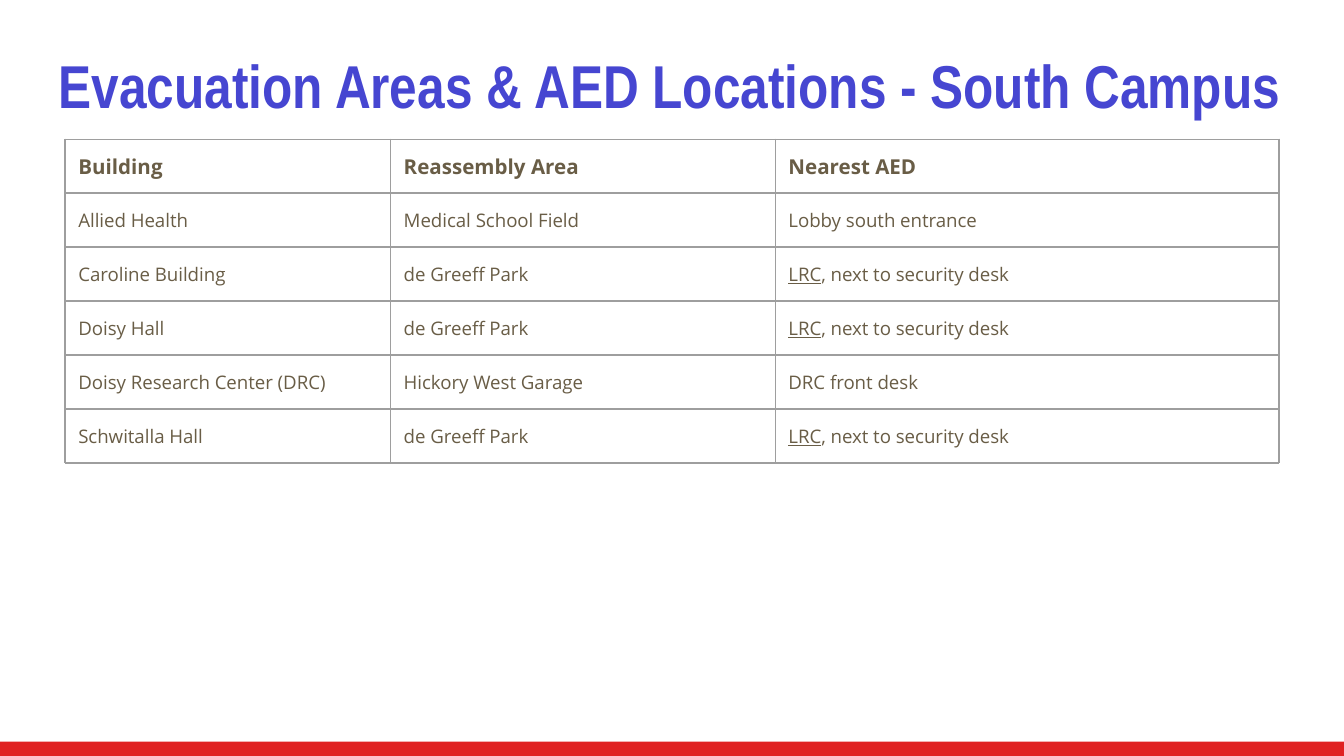
from lxml.etree import SubElement
from pptx import Presentation
from pptx.dml.color import RGBColor as Rgb
from pptx.enum.shapes import MSO_SHAPE as Shape
from pptx.enum.text import MSO_ANCHOR as Anchor
from pptx.oxml.ns import qn
from pptx.util import Cm, Pt

COLORS = {"title": "4646D1", "text": "695D46", "border": "9E9E9E", "footer": "E02121"}
INSET = Cm(0.25)
AED_DESK = [("LRC", True), (", next to security desk", False)]
LOCATIONS = [
    ["Building", "Reassembly Area", "Nearest AED"],
    ["Allied Health", "Medical School Field", "Lobby south entrance"],
    ["Caroline Building", "de Greeff Park", AED_DESK],
    ["Doisy Hall", "de Greeff Park", AED_DESK],
    ["Doisy Research Center (DRC)", "Hickory West Garage", "DRC front desk"],
    ["Schwitalla Hall", "de Greeff Park", AED_DESK],
]


def add_text(paragraph, text, size=10, font="Open Sans", color="text", bold=False, underline=False):
    run = paragraph.add_run()
    run.text = text
    run.font.size = Pt(size)
    run.font.name = font
    run.font.bold = bold
    run.font.underline = underline
    run.font.color.rgb = Rgb.from_string(COLORS[color])


class SlideBuilder:
    """Holds the current slide and draws its elements in one style."""

    def __init__(self, slide):
        self.slide = slide

    def bar(self, left, top, width, height, color):
        bar = self.slide.shapes.add_shape(
            Shape.RECTANGLE, Cm(left), Cm(top), Cm(width), Cm(height))
        bar.shadow.inherit = False
        bar.fill.solid()
        bar.fill.fore_color.rgb = Rgb.from_string(COLORS[color])
        bar.line.fill.background()

    def title(self, left, top, width, height, text):
        frame = self.slide.shapes.add_textbox(
            Cm(left), Cm(top), Cm(width), Cm(height)).text_frame
        frame.word_wrap = True
        frame.vertical_anchor = Anchor.MIDDLE
        frame.margin_left = frame.margin_right = INSET
        frame.margin_top = frame.margin_bottom = INSET
        add_text(frame.paragraphs[0], text, size=32.4, font="Arial Narrow",
                 color="title", bold=True)

    def table(self, left, top, widths, row_height, rows):
        table = self.slide.shapes.add_table(
            len(rows), len(widths), Cm(left), Cm(top),
            Cm(sum(widths)), Cm(row_height * len(rows))).table
        for column, width in zip(table.columns, widths):
            column.width = Cm(width)
        for r, entries in enumerate(rows):
            table.rows[r].height = Cm(row_height)
            for c, entry in enumerate(entries):
                self.cell(table.cell(r, c), entry, header=r == 0)

    def cell(self, cell, entry, header):
        cell.vertical_anchor = Anchor.MIDDLE
        cell.margin_left = cell.margin_right = INSET
        cell.margin_top = cell.margin_bottom = INSET
        self.borders(cell)
        cell.fill.background()
        parts = [(entry, False)] if isinstance(entry, str) else entry
        for text, underline in parts:
            add_text(cell.text_frame.paragraphs[0], text, size=11 if header else 10,
                     bold=header, underline=underline)

    def borders(self, cell):
        properties = cell._tc.get_or_add_tcPr()
        for side in ("a:lnL", "a:lnR", "a:lnT", "a:lnB"):
            line = SubElement(properties, qn(side), w=str(Pt(0.75)))
            fill = SubElement(line, qn("a:solidFill"))
            SubElement(fill, qn("a:srgbClr"), val=COLORS["border"])


def main():
    deck = Presentation()
    deck.slide_width, deck.slide_height = Cm(25.4), Cm(14.29)
    builder = SlideBuilder(deck.slides.add_slide(deck.slide_layouts[6]))
    builder.bar(0, 14.02, 25.4, 0.27, "footer")
    builder.title(0.86, 0.61, 23.68, 1.96, "Evacuation Areas & AED Locations - South Campus")
    builder.table(1.23, 2.63, [6.15, 7.27, 9.52], 1.02, LOCATIONS)
    deck.save("out.pptx")


if __name__ == "__main__":
    main()
